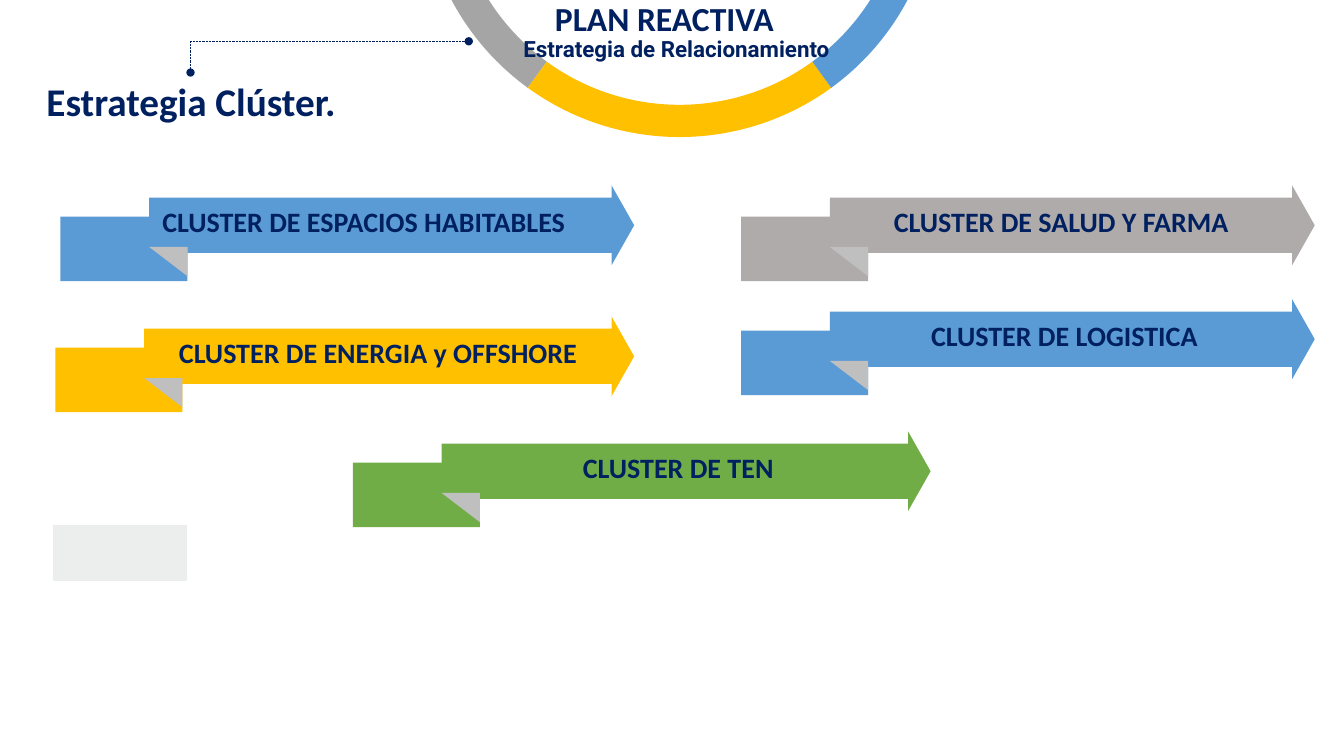
from dataclasses import dataclass
from math import cos, radians, sin, tan

from lxml import etree
from pptx import Presentation
from pptx.dml.color import RGBColor
from pptx.enum.dml import MSO_LINE
from pptx.enum.shapes import MSO_CONNECTOR, MSO_SHAPE
from pptx.enum.text import MSO_ANCHOR, MSO_AUTO_SIZE, PP_ALIGN
from pptx.oxml.ns import qn
from pptx.util import Inches, Pt

RECT, ARROW = MSO_SHAPE.RECTANGLE, MSO_SHAPE.RIGHT_ARROW
ELBOW, DOTS = MSO_CONNECTOR.ELBOW, MSO_LINE.ROUND_DOT
LEFT, CENTER = PP_ALIGN.LEFT, PP_ALIGN.CENTER
TOP = MSO_ANCHOR.TOP
GROW = MSO_AUTO_SIZE.SHAPE_TO_FIT_TEXT


@dataclass(frozen=True)
class Theme:
    """Colours, fonts and type sizes of the slide."""
    navy: str = "002060"
    blue: str = "5B9BD5"
    gold: str = "FFC000"
    stone: str = "AFABAB"
    green: str = "70AD47"
    ring: str = "A5A5A5"
    fold: str = "BFBFBF"
    pale: str = "ECEDED"
    main: str = "Calibri"
    sub: str = "Roboto"
    title: int = 28
    plan: int = 24
    label: int = 20
    note: int = 16


THEME = Theme()
WIDE, HIGH = 13.33, 7.5
BANNERS = (
    ("CLUSTER DE ESPACIOS HABITABLES", THEME.blue, LEFT, (0.6, 1.84, 5.69, 0.95)),
    ("CLUSTER DE ENERGIA y OFFSHORE ", THEME.gold, CENTER, (0.55, 3.14, 5.74, 0.95)),
    ("CLUSTER DE SALUD Y FARMA ", THEME.stone, CENTER, (7.35, 1.84, 5.69, 0.95)),
    ("CLUSTER DE LOGISTICA", THEME.blue, CENTER, (7.35, 2.97, 5.69, 0.95)),
    ("CLUSTER DE TEN", THEME.green, CENTER, (3.5, 4.28, 5.73, 0.95)),
)


def paint(shape, color):
    """Fill a shape flat, with no line or shadow."""
    shape.shadow.inherit = False
    shape.fill.solid()
    shape.fill.fore_color.rgb = RGBColor.from_string(color)
    shape.line.fill.background()


def block(shapes, kind, box, color):
    """Add a flat preset shape."""
    shape = shapes.add_shape(kind, *map(Inches, box))
    paint(shape, color)
    return shape


def outline(shapes, points, color):
    """Add a flat closed shape through the points."""
    spots = [(Inches(x), Inches(y)) for x, y in points]
    form = shapes.build_freeform(*spots[0], scale=1.0)
    form.add_line_segments(spots[1:], close=True)
    shape = form.convert_to_shape()
    paint(shape, color)
    return shape


def write(shape, text, size, font=THEME.main, align=CENTER):
    """Write one bold run in the first paragraph."""
    line = shape.text_frame.paragraphs[0]
    line.alignment = align
    run = line.add_run()
    run.text = text
    run.font.name, run.font.size, run.font.bold = font, Pt(size), True
    run.font.color.rgb = RGBColor.from_string(THEME.navy)


def banner(slide, text, color, align, box):
    """Place a folded ribbon arrow with its label in the box."""
    left, top, wide, high = box
    bend = left + 0.88
    shapes = slide.shapes.add_group_shape().shapes
    block(shapes, RECT, (left, top + 0.31, 1.26, high - 0.31), color)
    arrow = block(shapes, ARROW, (bend, top, wide - 0.88, 0.79), color)
    arrow.adjustments[0], arrow.adjustments[1] = 0.695, 0.283
    frame = arrow.text_frame
    frame.word_wrap, frame.vertical_anchor = True, TOP
    frame.margin_left = frame.margin_right = Inches(0.13)
    frame.margin_top = frame.margin_bottom = Inches(0.07)
    write(arrow, text, THEME.label, align=align)
    low, edge = top + 0.61, bend + 0.38
    outline(shapes, ((bend, low), (edge, low), (edge, low + 0.29)), THEME.fold)


def arc(mid, radius, turns):
    """Return curve points, with two handles between each pair of angles."""
    def spot(angle, pull=0):
        """Return a point on the circle, moved along its tangent."""
        x, y = cos(radians(angle)), sin(radians(angle))
        return mid[0] + radius * (x - pull * y), mid[1] + radius * (y + pull * x)

    points = [spot(turns[0])]
    for start, stop in zip(turns, turns[1:]):
        pull = 4 / 3 * tan(radians(stop - start) / 4)
        points += [spot(start, pull), spot(stop, -pull), spot(stop)]
    return points


def curve(shape, bends):
    """Turn the lines on both sides of a ring part into curves."""
    track = shape._element.spPr.find(".//" + qn("a:path"))
    lines = track.findall(qn("a:lnTo"))
    side = 3 * bends
    for first in (*range(0, side, 3), *range(side + 1, 2 * side + 1, 3)):
        bow = etree.Element(qn("a:cubicBezTo"))
        lines[first].addprevious(bow)
        for line in lines[first:first + 3]:
            bow.append(line[0])
            track.remove(line)


def wheel(slide, mid, outer, inner):
    """Draw the three ring parts around the middle."""
    shapes = slide.shapes.add_group_shape().shapes
    parts = (((126, 163), THEME.ring), ((54, 90, 126), THEME.gold),
             ((17, 54), THEME.blue))
    for turns, color in parts:
        rim = arc(mid, outer, turns) + arc(mid, inner, turns[::-1])
        curve(outline(shapes, rim, color), len(turns) - 1)


def caption(slide, text, size, font, box):
    """Add a centred text box."""
    shape = slide.shapes.add_textbox(*map(Inches, box))
    shape.text_frame.word_wrap = True
    shape.text_frame.auto_size = GROW
    write(shape, text, size, font)


def heading(slide, text, box):
    """Move and format the title placeholder."""
    title = slide.shapes.title
    title.left, title.top, title.width, title.height = map(Inches, box)
    frame = title.text_frame
    frame.word_wrap, frame.auto_size = False, GROW
    frame.vertical_anchor = TOP
    write(title, text, THEME.title)


def link(slide, start, stop):
    """Join two points by a dotted elbow with round ends."""
    line = slide.shapes.add_connector(ELBOW, *map(Inches, start + stop))
    line.line.width, line.line.dash_style = Pt(0.5), DOTS
    line.line.color.rgb = RGBColor.from_string(THEME.navy)
    props = line._element.spPr
    props.find(qn("a:prstGeom")).set("prst", "bentConnector2")
    for end in ("a:headEnd", "a:tailEnd"):
        etree.SubElement(props.find(qn("a:ln")), qn(end), type="oval")
    etree.SubElement(props, qn("a:effectLst"))


def main():
    """Build and save the slide."""
    deck = Presentation()
    deck.slide_width, deck.slide_height = Inches(WIDE), Inches(HIGH)
    slide = deck.slides.add_slide(deck.slide_layouts[5])
    strip = block(slide.shapes, RECT, (0.53, 5.22, 1.32, 0.54), THEME.pale)
    strip.line.color.rgb = RGBColor.from_string(THEME.pale)
    strip.line.width = Pt(1)
    wheel(slide, (6.74, -1.2), 2.56, 2.24)
    caption(slide, "PLAN REACTIVA", THEME.plan, THEME.main, (4.42, -0.07, 4.34, 0.5))
    caption(slide, "Estrategia de Relacionamiento", THEME.note, THEME.sub,
            (5.04, 0.3, 3.34, 0.64))
    heading(slide, "Estrategia Clúster.", (0.34, 0.72, 3.11, 0.57))
    link(slide, (4.65, 0.41), (1.89, 0.72))
    for item in BANNERS:
        banner(slide, *item)
    deck.save("out.pptx")


if __name__ == "__main__":
    main()
